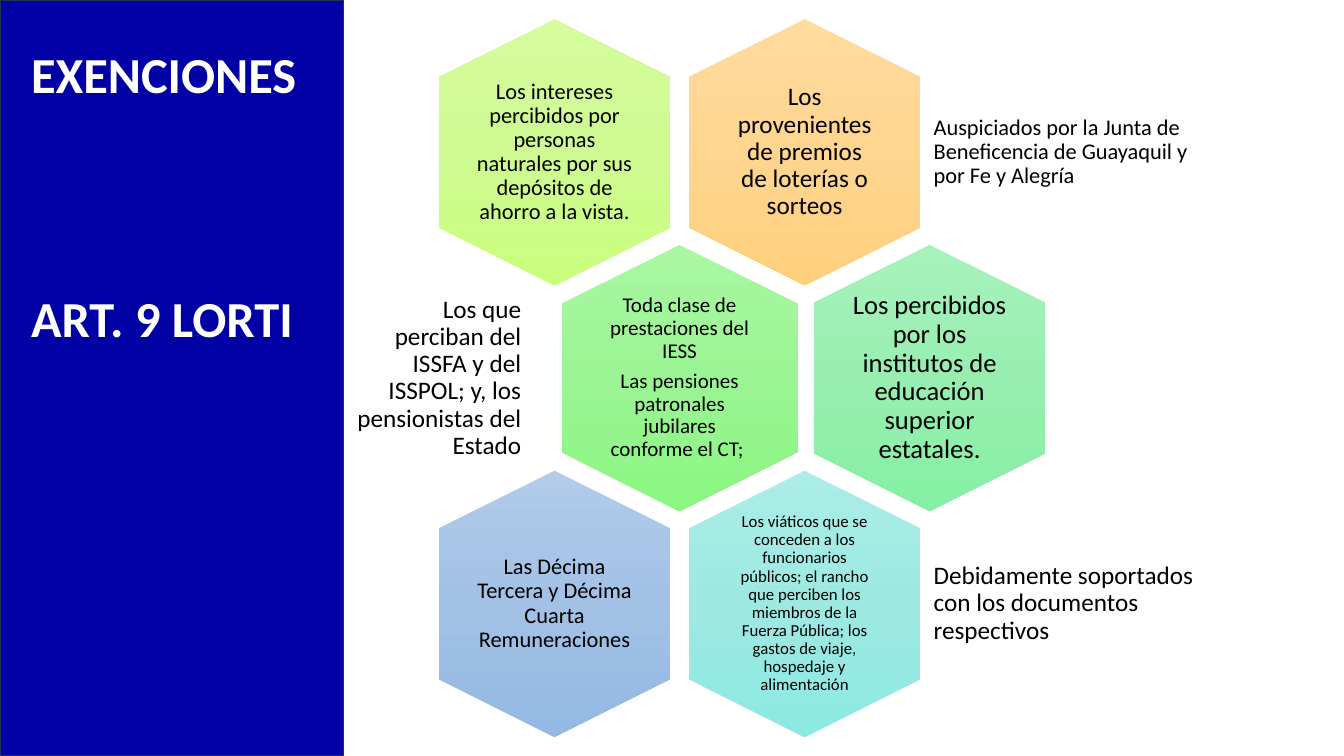
import copy

import pptx
import pptx.dml.color
import pptx.enum.shapes
import pptx.enum.text
import pptx.oxml.ns
import pptx.util

Inches = pptx.util.Inches
Pt = pptx.util.Pt
ALIGN = pptx.enum.text.PP_ALIGN
ANCHOR = pptx.enum.text.MSO_ANCHOR
SHAPE = pptx.enum.shapes.MSO_SHAPE
FONT = "Calibri"

# Honeycomb measures, in inches
HEX_LENGTH, HEX_WIDTH = 2.64, 2.29
COLUMN_STEP, ROW_STEP = 2.48, 2.24
LABEL_WIDTH, LABEL_HEIGHT = 1.58, 1.81
CAPTION_HEIGHT = 1.58

# row, column, hexagon width, gradient, text size, inset, paragraphs
CELLS = [
    (0, 0, HEX_WIDTH, ("D5FC9F", "CEFA91", "CAFF7D"), 16, 0,
     ["Los intereses percibidos por personas naturales por sus depósitos de ahorro a la vista."]),
    (0, 1, HEX_WIDTH, ("FFDB9E", "FFD590", "FFD07C"), 18, 0.07,
     ["Los provenientes de premios de loterías o sorteos"]),
    (1, 0, 2.34, ("A9F7A2", "9BF494", "89F780"), 15, 0.06,
     ["Toda clase de prestaciones del IESS",
      "Las pensiones patronales jubilares conforme el CT; "]),
    (1, 1, HEX_WIDTH, ("A6F2BC", "98EEB0", "84F0A4"), 19, 0,
     ["Los percibidos por los institutos de educación superior estatales."]),
    (2, 0, HEX_WIDTH, ("B1CBE9", "A3C1E5", "93B9E4"), 16, 0,
     ["Las Décima Tercera y Décima Cuarta Remuneraciones"]),
    (2, 1, HEX_WIDTH, ("ABEDE7", "9DE9E2", "8BEAE2"), 12, 0.05,
     ["Los viáticos que se conceden a los funcionarios públicos; el rancho que perciben "
      "los miembros de la Fuerza Pública; los gastos de viaje, hospedaje y alimentación"]),
]

# row, left, width, alignment, text size, text
CAPTIONS = [
    (0, 9.19, 2.94, ALIGN.LEFT, 16,
     "Auspiciados por la Junta de Beneficencia de Guayaquil y por Fe y Alegría"),
    (1, 3.41, 1.83, ALIGN.RIGHT, 18,
     "Los que perciban del ISSFA y del ISSPOL; y, los pensionistas del Estado"),
    (2, 9.19, 2.94, ALIGN.LEFT, 18,
     "Debidamente soportados con los documentos respectivos"),
]


def rgb(value):
    return pptx.dml.color.RGBColor.from_string(value)


def add_run(paragraph, text, size, color, bold=False):
    run = paragraph.add_run()
    run.text = text
    run.font.name = FONT
    run.font.size = Pt(size)
    run.font.bold = bold
    run.font.color.rgb = rgb(color)


def add_text(slide, left, top, width, height, paragraphs, size, alignment, inset):
    """Vertically centred black text in the given box."""
    box = slide.shapes.add_textbox(Inches(left), Inches(top), Inches(width), Inches(height))
    frame = box.text_frame
    frame.word_wrap = True
    frame.vertical_anchor = ANCHOR.MIDDLE
    frame.margin_left = frame.margin_right = Inches(inset)
    frame.margin_top = frame.margin_bottom = Inches(inset)
    for index, text in enumerate(paragraphs):
        paragraph = frame.add_paragraph() if index else frame.paragraphs[0]
        paragraph.alignment = alignment
        paragraph.line_spacing = 0.9
        paragraph.space_after = Pt(size * 0.35)
        add_run(paragraph, text, size, "000000")


def fill_gradient(shape, colors):
    """Three-stop gradient that runs downwards however the shape is turned."""
    shape.fill.gradient()
    shape.fill.gradient_angle = 270
    gradient = shape._element.spPr.find(pptx.oxml.ns.qn("a:gradFill"))
    gradient.set("rotWithShape", "0")
    stops = gradient.find(pptx.oxml.ns.qn("a:gsLst"))
    stops.insert(1, copy.deepcopy(stops[0]))
    for stop, position, color in zip(shape.fill.gradient_stops, (0, 0.5, 1), colors):
        stop.position = position
        stop.color.rgb = rgb(color)


def add_cell(slide, center_x, center_y, width, colors, size, inset, paragraphs):
    """Upright hexagon with its label, around a centre point."""
    hexagon = slide.shapes.add_shape(
        SHAPE.HEXAGON, Inches(center_x - HEX_LENGTH / 2), Inches(center_y - width / 2),
        Inches(HEX_LENGTH), Inches(width))
    hexagon.rotation = 90
    hexagon.adjustments[0] = 0.25
    hexagon.shadow.inherit = False
    hexagon.line.fill.background()
    fill_gradient(hexagon, colors)
    add_text(slide, center_x - LABEL_WIDTH / 2, center_y - LABEL_HEIGHT / 2,
             LABEL_WIDTH, LABEL_HEIGHT, paragraphs, size, ALIGN.CENTER, inset)


def add_honeycomb(slide, first_x, first_y):
    """Three rows of hexagons, the middle one half a step to the right."""
    for row, column, width, colors, size, inset, paragraphs in CELLS:
        center_x = first_x + COLUMN_STEP * (column + row % 2 / 2)
        add_cell(slide, center_x, first_y + ROW_STEP * row,
                 width, colors, size, inset, paragraphs)
    for row, left, width, alignment, size, text in CAPTIONS:
        top = first_y + ROW_STEP * row - CAPTION_HEIGHT / 2
        add_text(slide, left, top, width, CAPTION_HEIGHT, [text], size, alignment, 0.07)


def add_title_panel(slide, left, top, width, height):
    """Dark side panel with the two-part title."""
    panel = slide.shapes.add_shape(
        SHAPE.RECTANGLE, Inches(left), Inches(top), Inches(width), Inches(height))
    panel.shadow.inherit = False
    panel.fill.solid()
    panel.fill.fore_color.rgb = rgb("0000A4")
    panel.line.color.rgb = rgb("1E3256")
    panel.line.width = Pt(1)

    title = slide.shapes.add_textbox(
        Inches(left + 0.21), Inches(top + 0.38), Inches(3), Inches(3.13))
    frame = title.text_frame
    frame.word_wrap = True
    add_run(frame.paragraphs[0], "EXENCIONES", 36, "FFFFFF", bold=True)
    article = frame.add_paragraph()
    article.space_before = Pt(131)
    add_run(article, "ART. 9 LORTI", 36, "FFFFFF", bold=True)


def main():
    presentation = pptx.Presentation()
    presentation.slide_width = Inches(13.33)
    presentation.slide_height = Inches(7.5)
    slide = presentation.slides.add_slide(presentation.slide_layouts[6])
    add_honeycomb(slide, 5.5, 1.51)
    add_title_panel(slide, 0, 0, 3.41, 7.5)
    presentation.save("out.pptx")


if __name__ == "__main__":
    main()
